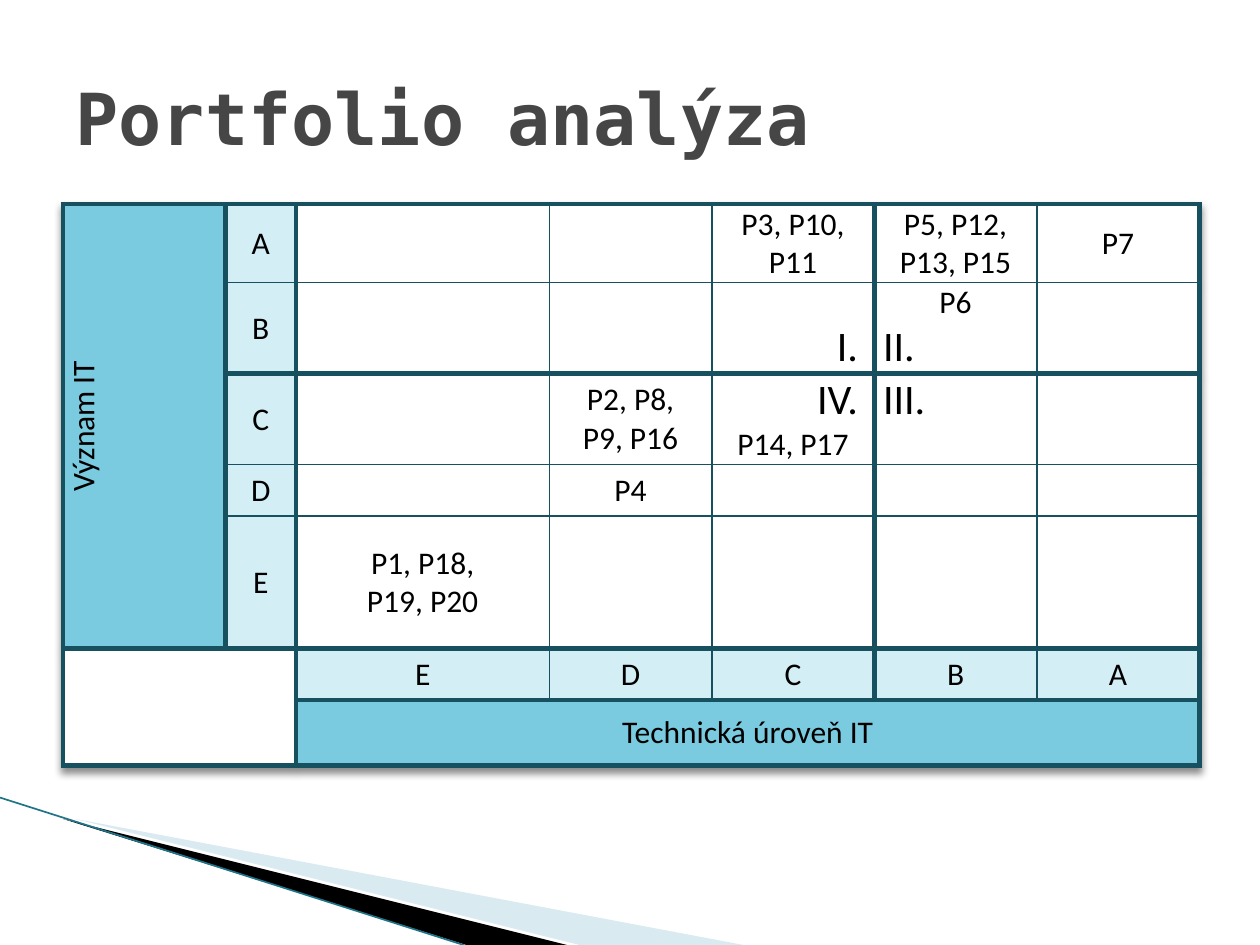
from lxml import etree
from pptx import Presentation
from pptx.dml.color import RGBColor
from pptx.enum.shapes import MSO_CONNECTOR
from pptx.enum.text import MSO_ANCHOR, MSO_AUTO_SIZE, PP_ALIGN
from pptx.oxml.ns import qn
from pptx.util import Inches, Pt

LEFT, CENTER, RIGHT = PP_ALIGN.LEFT, PP_ALIGN.CENTER, PP_ALIGN.RIGHT
TOP, MIDDLE, BOTTOM = MSO_ANCHOR.TOP, MSO_ANCHOR.MIDDLE, MSO_ANCHOR.BOTTOM
STRAIGHT = MSO_CONNECTOR.STRAIGHT
TITLE_ONLY = 5

WHITE, BLACK, EDGE = "FFFFFF", "000000", "175160"
AXIS, LEVEL = "7ACBE0", "D3EEF5"

# Table measures in grid units (a tenth of an inch)
COLUMNS = [12.9, 5.6, 20.1] + [12.9] * 4
ROWS = [6.2, 7.2, 7.2, 4.1, 10.5, 4.1, 5.2]
HEAVY_X, HEAVY_Y = {0, 1, 2, 5, 7}, {0, 2, 5, 6, 7}
MERGES = [((0, 0), (4, 0)), ((5, 0), (6, 1)), ((6, 2), (6, 6))]
LEVELS = "ABCDE"

# (importance, technical level): lines of projects
PROJECTS = {
    "AC": ["P3, P10,", "P11"],
    "AB": ["P5, P12,", "P13, P15"],
    "AA": ["P7"],
    "CD": ["P2, P8,", "P9, P16"],
    "DD": ["P4"],
    "EE": ["P1, P18,", "P19, P20"],
}
# Cells around the centre: lines, quadrant alignment, anchor, side margin
QUADRANTS = {
    "BC": (["I."], RIGHT, BOTTOM, 1.3),
    "BB": (["P6", "II."], LEFT, MIDDLE, 0.7),
    "CC": (["IV.", "P14, P17"], RIGHT, MIDDLE, 1.3),
    "CB": (["III."], LEFT, TOP, 0.7),
}


def rgb(color):
    return RGBColor.from_string(color)


def add_xml(parent, tag, **attributes):
    return etree.SubElement(parent, qn(tag), attributes)


class Deck:
    font, title_font = "Calibri", "DejaVu Sans Mono"
    text_size, quadrant_size, title_size = 18, 24, 41

    def __init__(self):
        self.presentation = Presentation()
        self.presentation.slide_width = Inches(10)
        self.presentation.slide_height = Inches(7.5)
        self.unit = self.presentation.slide_width / 100
        layout = self.presentation.slide_layouts[TITLE_ONLY]
        self.slide = self.presentation.slides.add_slide(layout)

    def grid(self, *units):
        """Turn grid units (100 columns by 75 rows) into lengths."""
        return [round(value * self.unit) for value in units]

    def title(self, text, *box):
        title = self.slide.shapes.title
        title.left, title.top, title.width, title.height = self.grid(*box)
        frame = title.text_frame
        frame.text = text
        frame.auto_size = MSO_AUTO_SIZE.NONE
        frame.vertical_anchor = MIDDLE
        self.style(frame.paragraphs[0], LEFT, self.title_size, "464646", self.title_font, True)

    def style(self, paragraph, align, size, color=BLACK, font=font, bold=False):
        paragraph.alignment = align
        paragraph.font.size, paragraph.font.name = Pt(size), font
        paragraph.font.bold, paragraph.font.color.rgb = bold, rgb(color)

    def polygon(self, points, color, opacity=100):
        start, *rest = points
        builder = self.slide.shapes.build_freeform(*start, scale=self.unit)
        builder.add_line_segments(rest, close=True)
        shape = builder.convert_to_shape()
        shape.shadow.inherit = False
        shape.fill.solid()
        shape.fill.fore_color.rgb = rgb(color)
        shape.line.fill.background()
        if opacity < 100:
            tint = shape._element.spPr.find(".//" + qn("a:srgbClr"))
            add_xml(tint, "a:alpha", val=str(opacity * 1000))

    def line(self, start, end, color, width):
        line = self.slide.shapes.add_connector(STRAIGHT, *self.grid(*start, *end))
        line.line.color.rgb, line.line.width = rgb(color), Pt(width)
        add_xml(line._element.spPr, "a:effectLst")

    def table(self, left, top, columns, rows):
        frame = self.slide.shapes.add_table(
            len(rows), len(columns), *self.grid(left, top, sum(columns), sum(rows)))
        table = frame.table
        table.first_row = table.horz_banding = False
        for column, width in zip(table.columns, self.grid(*columns)):
            column.width = width
        for row, height in zip(table.rows, self.grid(*rows)):
            row.height = height
        effects = etree.Element(qn("a:effectLst"))
        shadow = add_xml(effects, "a:outerShdw", blurRad="50800", dist="38100",
                         dir="5400000", rotWithShape="0")
        add_xml(add_xml(shadow, "a:srgbClr", val=BLACK), "a:alpha", val="45000")
        table._tbl.tblPr.insert(0, effects)
        return table

    def cell(self, cell, row, column, color):
        """Fill a cell and draw its edges, heavy on the quadrant and axis lines."""
        right, bottom = column + cell.span_width, row + cell.span_height
        properties = cell._tc.get_or_add_tcPr()
        edges = [("a:lnL", column in HEAVY_X), ("a:lnR", right in HEAVY_X),
                 ("a:lnT", row in HEAVY_Y), ("a:lnB", bottom in HEAVY_Y)]
        for tag, heavy in edges:
            edge = add_xml(properties, tag, w=str(Pt(3 if heavy else 1)))
            add_xml(add_xml(edge, "a:solidFill"), "a:srgbClr", val=EDGE)
        cell.fill.solid()
        cell.fill.fore_color.rgb = rgb(color)
        self.style(cell.text_frame.paragraphs[0], CENTER, self.text_size)

    def cell_text(self, cell, lines, quadrant_align=CENTER, anchor=MIDDLE, margin=0.1):
        cell.text = "\n".join(lines)
        cell.vertical_anchor = anchor
        cell.margin_left, cell.margin_right = self.grid(margin, margin)
        cell.margin_top, cell.margin_bottom = self.grid(0.1, 0)
        for paragraph in cell.text_frame.paragraphs:
            if paragraph.text.endswith("."):
                self.style(paragraph, quadrant_align, self.quadrant_size)
            else:
                self.style(paragraph, CENTER, self.text_size)


def portfolio(deck):
    table = deck.table(5, 16.2, COLUMNS, ROWS)
    for first, last in MERGES:
        table.cell(*first).merge(table.cell(*last))

    labels = {(0, 0): "Význam IT", (6, 2): "Technická úroveň IT"}
    level_cells = {(row, 1): level for row, level in enumerate(LEVELS)}
    level_cells |= {(5, 6 - step): level for step, level in enumerate(LEVELS)}
    for row in range(len(ROWS)):
        for column in range(len(COLUMNS)):
            place, cell = (row, column), table.cell(row, column)
            if cell.is_spanned:
                continue
            color = AXIS if place in labels else LEVEL if place in level_cells else WHITE
            deck.cell(cell, row, column, color)
    for place, text in (labels | level_cells).items():
        deck.cell_text(table.cell(*place), [text])
    table.cell(0, 0)._tc.get_or_add_tcPr().set("vert", "vert270")

    def level_cell(key):
        importance, technical = key
        return table.cell(LEVELS.index(importance), 6 - LEVELS.index(technical))

    for key, lines in PROJECTS.items():
        deck.cell_text(level_cell(key), lines)
    for key, content in QUADRANTS.items():
        deck.cell_text(level_cell(key), *content)


def main():
    deck = Deck()
    deck.polygon([(5.5, 65.1), (59, 75), (45.6, 75), (5.5, 65)], "A0CBDC", 40)
    deck.polygon([(5.3, 64.9), (45.4, 75), (37, 75), (5.4, 65)], BLACK)
    deck.line((0, 63.3), (36.8, 75), "1F7488", 0.95)
    portfolio(deck)
    deck.title("Portfolio analýza", 5, 3, 90, 12.5)
    deck.presentation.save("out.pptx")


if __name__ == "__main__":
    main()
